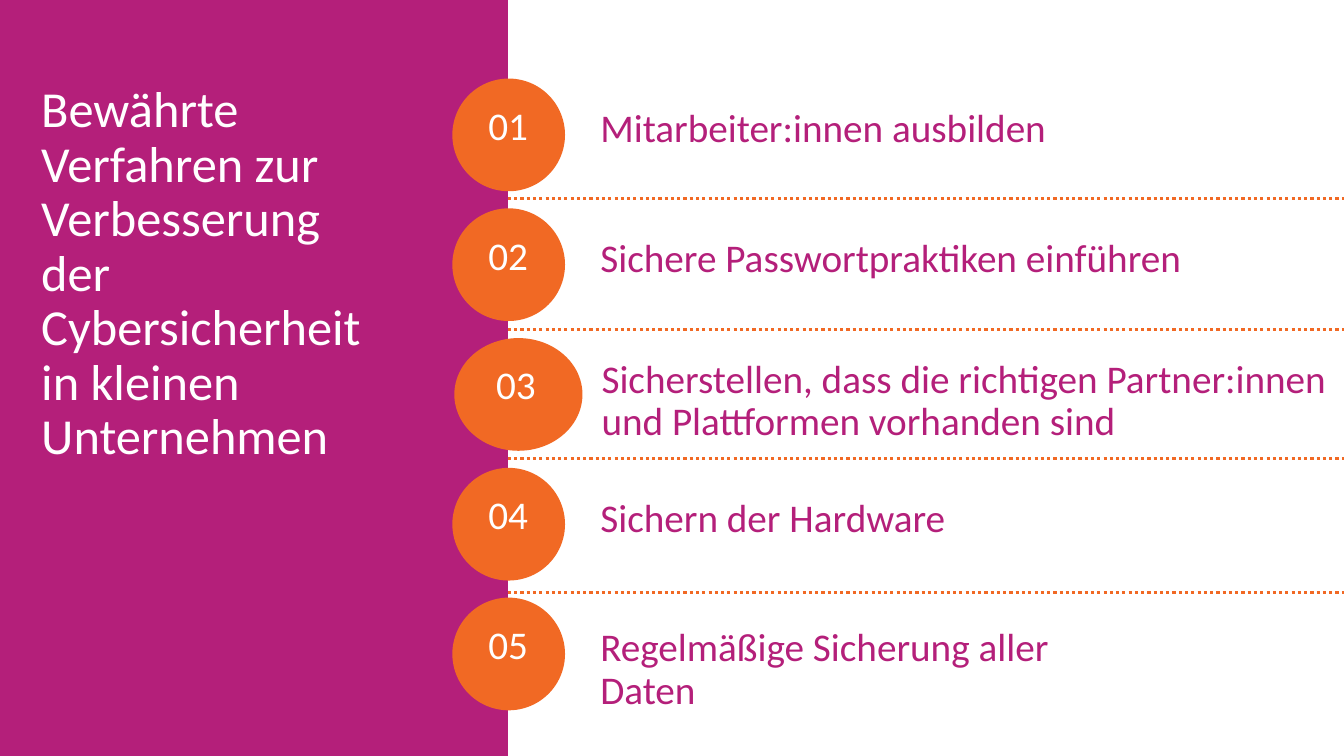
from dataclasses import dataclass

from lxml.etree import SubElement
from pptx import Presentation
from pptx.dml.color import RGBColor
from pptx.enum.dml import MSO_LINE_DASH_STYLE as Dash
from pptx.enum.shapes import MSO_CONNECTOR, MSO_SHAPE
from pptx.enum.text import PP_ALIGN
from pptx.oxml.ns import qn
from pptx.util import Cm, Pt


@dataclass(frozen=True)
class Theme:
    magenta: RGBColor = RGBColor(0xB4, 0x1F, 0x7A)
    orange: RGBColor = RGBColor(0xF1, 0x69, 0x24)
    white: RGBColor = RGBColor(0xFF, 0xFF, 0xFF)
    font: str = "Calibri"
    title_size: int = 36
    item_size: int = 28


@dataclass(frozen=True)
class Practice:
    """One numbered entry; lengths are in centimetres."""
    label: str
    label_width: float = 14.3
    label_left: float = 14.88
    label_drop: float = 0.64
    disc_left: float = 11.4
    disc_width: float = 2.84


THEME = Theme()
SLIDE_WIDTH, SLIDE_HEIGHT = 33.87, 19.05
PANEL_WIDTH = 12.8
FIRST_ROW, ROW_STEP = 1.98, 3.27
DISC_HEIGHT = 2.84
NUMBER_LEFT, NUMBER_DROP = 11.2, 0.58
BOX_HEIGHT = 2.4

TITLE = ("Bewährte Verfahren zur Verbesserung der Cybersicherheit "
         "in kleinen Unternehmen")
PRACTICES = [
    Practice("Mitarbeiter:innen ausbilden"),
    Practice("Sichere Passwortpraktiken einführen", label_width=17.6),
    Practice("Sicherstellen, dass die richtigen Partner:innen "
             "und Plattformen vorhanden sind",
             label_width=18.95, label_left=14.91, label_drop=0.41,
             disc_left=11.45, disc_width=3.23),
    Practice("Sichern der Hardware"),
    Practice("Regelmäßige Sicherung aller Daten"),
]
SEPARATORS = [5.0, 8.31, 11.56, 14.94]


def add_filled(shapes, kind, left, top, width, height, color):
    shape = shapes.add_shape(kind, Cm(left), Cm(top), Cm(width), Cm(height))
    shape.shadow.inherit = False
    shape.fill.solid()
    shape.fill.fore_color.rgb = color
    shape.line.fill.background()


def add_text(shapes, text, left, top, width, height, size, color,
             align=PP_ALIGN.LEFT):
    box = shapes.add_textbox(Cm(left), Cm(top), Cm(width), Cm(height))
    box.text_frame.word_wrap = True
    para = box.text_frame.paragraphs[0]
    para.text = text
    para.alignment = align
    para.line_spacing = 0.9
    span = para.runs[0]
    span.font.name = THEME.font
    span.font.size = Pt(size)
    span.font.color.rgb = color


def add_practice(page, index, practice):
    """Group the label, disc and number of one entry."""
    top = FIRST_ROW + index * ROW_STEP
    shapes = page.shapes.add_group_shape().shapes
    add_text(shapes, practice.label, practice.label_left,
             top + practice.label_drop, practice.label_width, BOX_HEIGHT,
             THEME.item_size, THEME.magenta)
    add_filled(shapes, MSO_SHAPE.OVAL, practice.disc_left, top,
               practice.disc_width, DISC_HEIGHT, THEME.orange)
    add_text(shapes, f"{index + 1:02}", NUMBER_LEFT, top + NUMBER_DROP,
             practice.disc_width + 0.38, BOX_HEIGHT,
             THEME.item_size, THEME.white, PP_ALIGN.CENTER)


def add_separator(page, top):
    line = page.shapes.add_connector(
        MSO_CONNECTOR.STRAIGHT, Cm(PANEL_WIDTH), Cm(top), Cm(SLIDE_WIDTH), Cm(top))
    line.line.color.rgb = THEME.orange
    line.line.width = Pt(2.25)
    line.line.dash_style = Dash.ROUND_DOT
    SubElement(line.element.spPr, qn("a:effectLst"))


def main():
    deck = Presentation()
    deck.slide_width, deck.slide_height = Cm(SLIDE_WIDTH), Cm(SLIDE_HEIGHT)
    page = deck.slides.add_slide(deck.slide_layouts[6])
    add_filled(page.shapes, MSO_SHAPE.RECTANGLE, 0, 0,
               PANEL_WIDTH, SLIDE_HEIGHT, THEME.magenta)
    add_text(page.shapes, TITLE, 0.79, 2.0, 8.8, 9.12,
             THEME.title_size, THEME.white)
    for index, practice in enumerate(PRACTICES):
        add_practice(page, index, practice)
    for top in SEPARATORS:
        add_separator(page, top)
    deck.save("out.pptx")


if __name__ == "__main__":
    main()
